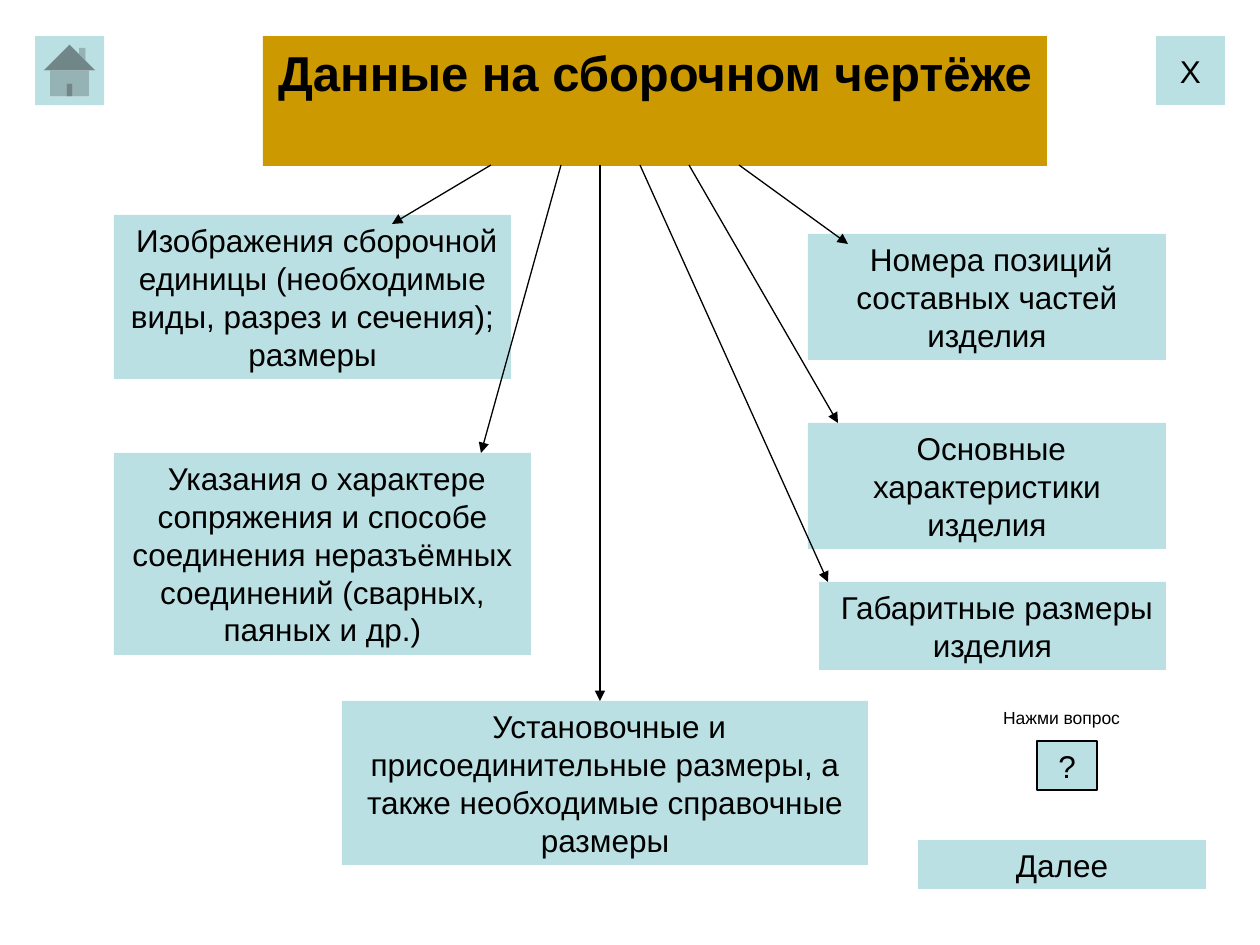
import pptx
import pptx.dml.color
import pptx.enum.shapes
import pptx.enum.text
import pptx.util
from pptx.oxml.ns import qn
from lxml import etree

SCALE = 914400 / 126  # EMU per px
SHAPE = pptx.enum.shapes.MSO_SHAPE
ANCHOR = pptx.enum.text.MSO_ANCHOR
PALE, GOLD, BLACK = "BBE0E3", "CC9900", "000000"

# Left, top, width, height and wording of each kind of drawing data
TOPICS = [
    (114, 215, 397, 164, " Изображения сборочной единицы (необходимые виды, разрез и сечения); размеры"),
    (114, 453, 417, 202, " Указания о характере сопряжения и способе соединения неразъёмных "
                         "соединений (сварных, паяных и др.)"),
    (808, 234, 358, 126, " Номера позиций составных частей изделия"),
    (808, 423, 358, 126, " Основные характеристики изделия"),
    (819, 582, 347, 88, " Габаритные размеры изделия"),
    (342, 701, 526, 164, " Установочные и присоединительные размеры, а также необходимые "
                         "справочные размеры"),
]

# Start x on the title's lower edge, then the arrow tip
TITLE_BOTTOM = 165
ARROWS = [
    (491, 392, 224), (561, 481, 453), (739, 848, 244),
    (689, 838, 423), (640, 828, 582), (600, 600, 701),
]


def px(n):
    return pptx.util.Emu(round(n * SCALE))


def color(hex_value):
    return pptx.dml.color.RGBColor.from_string(hex_value)


def write(s, text, size=18, bold=False, anchor=ANCHOR.TOP, wrap=True):
    tf = s.text_frame
    tf.word_wrap = wrap
    tf.vertical_anchor = anchor
    p = tf.paragraphs[0]
    p.alignment = pptx.enum.text.PP_ALIGN.CENTER
    r = p.add_run()
    r.text = text
    r.font.name = "Arial"
    r.font.size = pptx.util.Pt(size)
    r.font.bold = bold
    r.font.color.rgb = color(BLACK)


def add_box(slide, x, y, w, h, fill=PALE, kind=SHAPE.RECTANGLE, outlined=False):
    s = slide.shapes.add_shape(kind, px(x), px(y), px(w), px(h))
    s.shadow.inherit = False
    s.fill.solid()
    s.fill.fore_color.rgb = color(fill)
    if outlined:
        s.line.color.rgb = color(BLACK)
        s.line.width = pptx.util.Pt(0.75)
    else:
        s.line.fill.background()
    return s


def add_button(slide, x, y, w, h, text, kind=SHAPE.ACTION_BUTTON_CUSTOM, outlined=False):
    s = add_box(slide, x, y, w, h, kind=kind, outlined=outlined)
    write(s, text, anchor=ANCHOR.MIDDLE, wrap=False)


def add_arrow(slide, x1, y1, x2, y2):
    s = slide.shapes.add_connector(
        pptx.enum.shapes.MSO_CONNECTOR.STRAIGHT, px(x1), px(y1), px(x2), px(y2))
    s.line.color.rgb = color(BLACK)
    s.line.width = pptx.util.Pt(0.75)
    etree.SubElement(s.line._get_or_add_ln(), qn("a:tailEnd"), type="triangle")
    etree.SubElement(s._element.spPr, qn("a:effectLst"))


def add_label(slide, x, y, w, h, text, size):
    s = slide.shapes.add_textbox(px(x), px(y), px(w), px(h))
    write(s, text, size)


def main():
    prs = pptx.Presentation()
    prs.slide_width, prs.slide_height = px(1260), px(945)
    slide = prs.slides.add_slide(prs.slide_layouts[6])

    # Title and topics
    title = add_box(slide, 263, 36, 784, 130, fill=GOLD)
    write(title, "Данные на сборочном чертёже", 28, bold=True)
    for x, y, w, h, text in TOPICS:
        write(add_box(slide, x, y, w, h), text)

    # Arrows from the title to the topics
    for start_x, tip_x, tip_y in ARROWS:
        add_arrow(slide, start_x, TITLE_BOTTOM, tip_x, tip_y)

    # Navigation
    add_box(slide, 35, 36, 69, 69, kind=SHAPE.ACTION_BUTTON_HOME)
    add_button(slide, 1156, 36, 69, 69, "Х")
    add_button(slide, 918, 840, 288, 49, "Далее")

    # Question
    add_button(slide, 1037, 741, 60, 49, "?", kind=SHAPE.RECTANGLE, outlined=True)
    add_label(slide, 987, 701, 149, 34, "Нажми вопрос", 10)

    prs.save("out.pptx")


if __name__ == "__main__":
    main()
